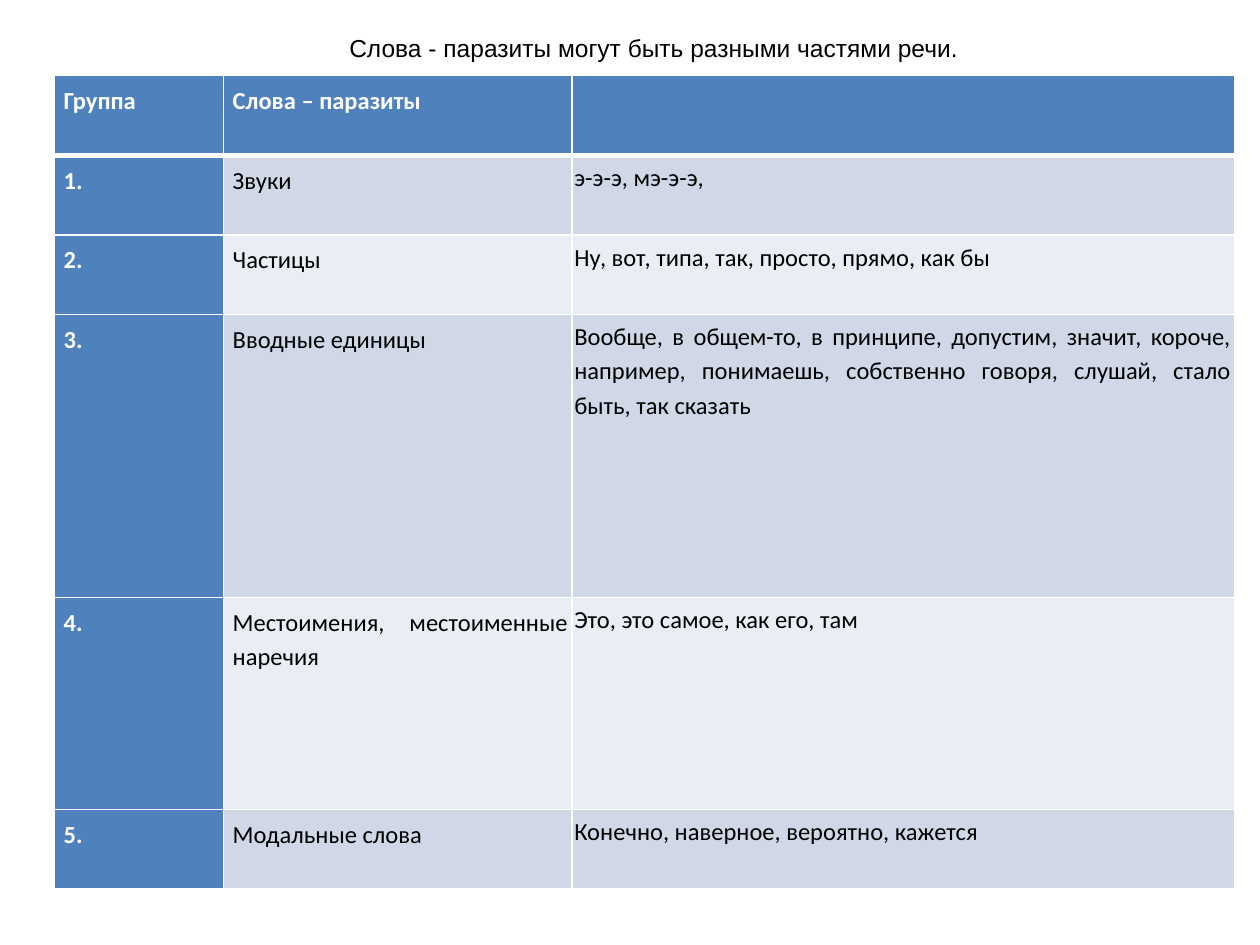
import pptx
import pptx.util
import pptx.dml.color
import pptx.enum.text
import pptx.oxml.ns
import lxml.etree

Pt = pptx.util.Pt
RGBColor = pptx.dml.color.RGBColor
ALIGN = pptx.enum.text.PP_ALIGN
ANCHOR = pptx.enum.text.MSO_ANCHOR

BLUE = RGBColor(0x4F, 0x81, 0xBD)
BANDS = [RGBColor(0xD0, 0xD8, 0xE8), RGBColor(0xE9, 0xED, 0xF4)]
WHITE = RGBColor(0xFF, 0xFF, 0xFF)
BLACK = RGBColor(0, 0, 0)

HEADING = "Слова - паразиты могут быть разными частями речи."
GROUPS = [
    ("Группа", "Слова – паразиты", ""),
    ("1.", "Звуки", "э-э-э, мэ-э-э,"),
    ("2.", "Частицы", "Ну, вот, типа, так, просто, прямо, как бы"),
    ("3.", "Вводные единицы",
     "Вообще, в общем-то, в принципе, допустим, значит, короче, например, "
     "понимаешь, собственно говоря, слушай, стало быть, так сказать"),
    ("4.", "Местоимения, местоименные наречия", "Это, это самое, как его, там"),
    ("5.", "Модальные слова", "Конечно, наверное, вероятно, кажется"),
]
COLUMN_WIDTHS = [96.6, 199, 379]
ROW_HEIGHTS = [45.5, 45.5, 45.5, 161.8, 121.2, 45.5]
LABEL_INSETS = (5.2, 3.6, 2.2, 0)
EXAMPLE_INSETS = (1.4, 2, 2.2, 2)


def write(frame, text, font="Calibri", color=BLACK, bold=False,
          align=ALIGN.JUSTIFY, spacing=1.15, after=6.2):
    paragraph = frame.paragraphs[0]
    paragraph.alignment = align
    paragraph.line_spacing = spacing
    paragraph.space_after = Pt(after)
    run = paragraph.add_run()
    run.text = text
    run.font.name = font
    run.font.size = Pt(14)
    run.font.bold = bold
    run.font.color.rgb = color


def add_borders(cell, bottom):
    properties = cell._tc.get_or_add_tcPr()
    qn = pptx.oxml.ns.qn
    for position, (side, width) in enumerate(
            [("lnL", 1), ("lnR", 1), ("lnT", 1), ("lnB", bottom)]):
        line = lxml.etree.Element(qn(f"a:{side}"), w=str(Pt(width)))
        fill = lxml.etree.SubElement(line, qn("a:solidFill"))
        lxml.etree.SubElement(fill, qn("a:srgbClr"), val=str(WHITE))
        properties.insert(position, line)


def add_groups(slide):
    table = slide.shapes.add_table(
        len(GROUPS), len(COLUMN_WIDTHS), Pt(31.2), Pt(43.2),
        Pt(sum(COLUMN_WIDTHS)), Pt(sum(ROW_HEIGHTS))).table
    for column, width in zip(table.columns, COLUMN_WIDTHS):
        column.width = Pt(width)
    for row, height in zip(table.rows, ROW_HEIGHTS):
        row.height = Pt(height)
    for r, group in enumerate(GROUPS):
        for c, text in enumerate(group):
            cell = table.cell(r, c)
            strong = r == 0 or c == 0
            insets = EXAMPLE_INSETS if c == 2 else LABEL_INSETS
            (cell.margin_left, cell.margin_top,
             cell.margin_right, cell.margin_bottom) = map(Pt, insets)
            cell.fill.solid()
            cell.fill.fore_color.rgb = BLUE if strong else BANDS[(r - 1) % 2]
            header_above = r == 0
            add_borders(cell, bottom=3 if header_above else 1)
            if text:
                write(cell.text_frame, text, bold=strong,
                      color=WHITE if strong else BLACK)


def add_heading(slide):
    frame = slide.shapes.add_textbox(
        Pt(191.5), Pt(15.1), Pt(364.3), Pt(24.5)).text_frame
    frame.word_wrap = False
    frame.auto_size = pptx.enum.text.MSO_AUTO_SIZE.SHAPE_TO_FIT_TEXT
    frame.vertical_anchor = ANCHOR.MIDDLE
    write(frame, HEADING, font="Arial", align=ALIGN.CENTER, spacing=1, after=0)


def main():
    deck = pptx.Presentation()
    deck.slide_width, deck.slide_height = Pt(720), Pt(540)
    slide = deck.slides.add_slide(deck.slide_layouts[6])
    add_groups(slide)
    add_heading(slide)
    deck.save("out.pptx")


if __name__ == "__main__":
    main()
